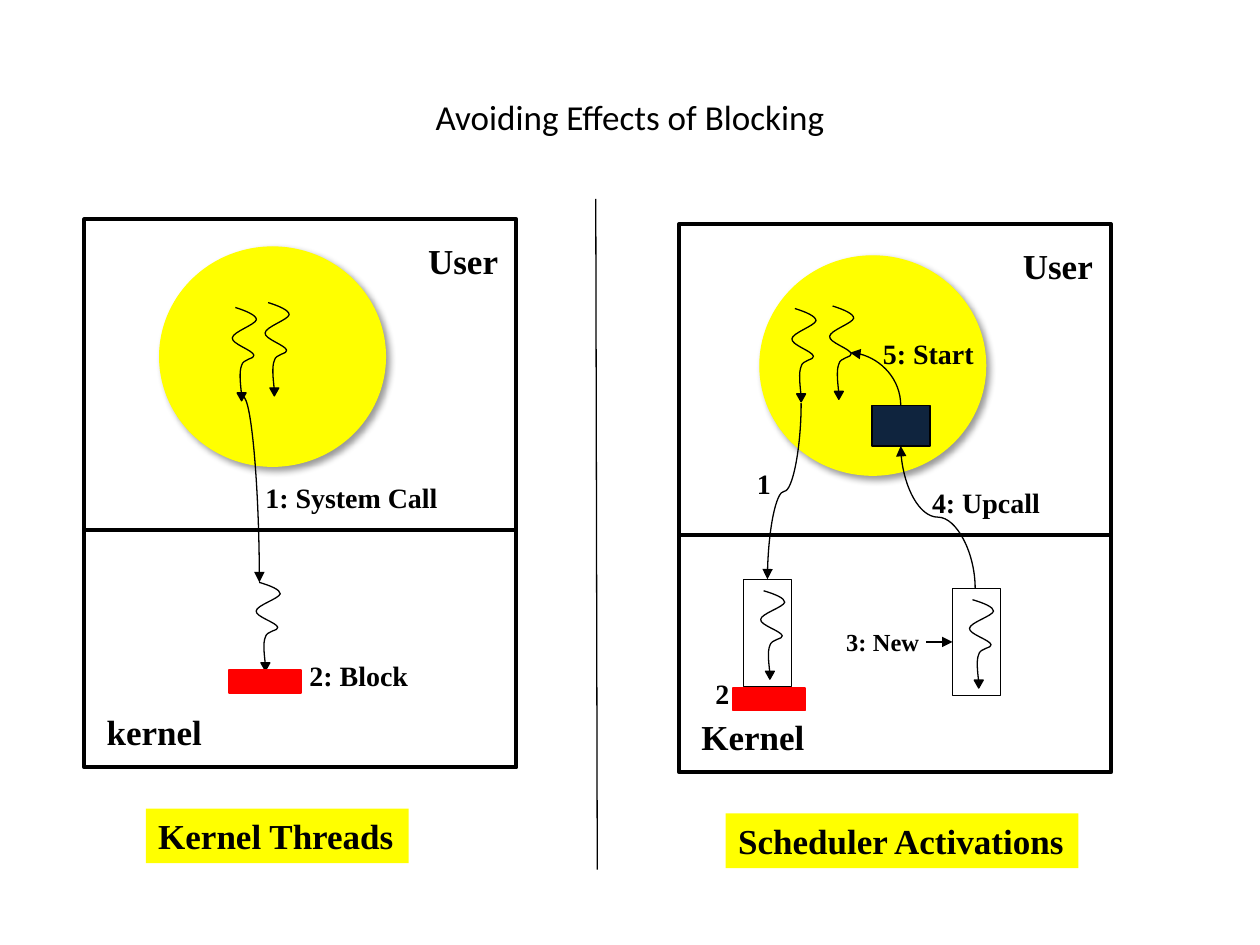
from lxml import etree
from pptx import Presentation
from pptx import util as u
from pptx.dml.color import RGBColor
from pptx.enum import shapes, text
from pptx.oxml.ns import qn

COLORS = {"ink": "000000", "process": "FFFF00", "block": "FF0000", "upcall": "0F243E"}
SERIF = "Times New Roman"
PANEL_W, PANEL_H = 8.71, 11.05
THREAD_W = 0.5
SQUIGGLE = [
    (0.15, 0), (0.6, 0.04), (1, 0.09), (1, 0.14),
    (0.95, 0.2), (0.05, 0.28), (0.03, 0.35),
    (0, 0.42), (0.85, 0.49), (0.9, 0.55),
    (0.95, 0.59), (0.45, 0.59), (0.4, 0.67),
    (0.3, 0.74), (0.35, 0.87), (0.4, 1),
]


def rgb(name):
    """Return the named colour."""
    return RGBColor.from_string(COLORS[name])


def add_text(s, x, y, w, h, words, size, font=SERIF, fill=None):
    """Add a one-line text box and return it."""
    sp = s.shapes.add_textbox(u.Cm(x), u.Cm(y), u.Cm(w), u.Cm(h))
    if fill:
        sp.fill.solid()
        sp.fill.fore_color.rgb = rgb(fill)
    tf = sp.text_frame
    tf.word_wrap = False
    tf.auto_size = text.MSO_AUTO_SIZE.SHAPE_TO_FIT_TEXT
    r = tf.paragraphs[0].add_run()
    r.text = words
    r.font.name, r.font.size, r.font.bold = font, u.Pt(size), font == SERIF
    r.font.color.rgb = rgb("ink")
    return sp


def style(sp, fill=None, line="ink", width=0.75):
    """Set the fill and outline of a shape without a shadow."""
    sp.shadow.inherit = False
    if fill:
        sp.fill.solid()
        sp.fill.fore_color.rgb = rgb(fill)
    else:
        sp.fill.background()
    sp.line.color.rgb = rgb(line)
    sp.line.width = u.Pt(width)
    return sp


def add_box(parent, kind, x, y, w, h, **look):
    """Add a styled preset shape to a slide or group."""
    sp = parent.shapes.add_shape(kind, u.Cm(x), u.Cm(y), u.Cm(w), u.Cm(h))
    return style(sp, **look)


def add_line(s, x1, y1, x2, y2, width=0.75, arrow=False, kind=shapes.MSO_CONNECTOR.STRAIGHT):
    """Add a connector, with an arrowhead at its end on request."""
    c = s.shapes.add_connector(kind, u.Cm(x1), u.Cm(y1), u.Cm(x2), u.Cm(y2))
    c.line.color.rgb = rgb("ink")
    c.line.width = u.Pt(width)
    spPr = c._element.spPr
    if arrow:
        etree.SubElement(spPr.find(qn("a:ln")), qn("a:tailEnd"), type="triangle")
    etree.SubElement(spPr, qn("a:effectLst"))
    return c


def add_curve(s, x1, y1, x2, y2, bends, upright=True):
    """Add a curved arrow; an upright one leaves vertically and heads left."""
    if upright:
        cx, cy = (x1 + x2) / 2, (y1 + y2) / 2
        dx, dy = (y2 - y1) / 2, (x1 - x2) / 2
        x1, y1, x2, y2 = cx - dx, cy - dy, cx + dx, cy + dy
    c = add_line(s, x1, y1, x2, y2, arrow=True, kind=shapes.MSO_CONNECTOR.CURVE)
    spPr = c._element.spPr
    spPr.find(qn("a:prstGeom")).set("prst", f"curvedConnector{bends}")
    if upright:
        spPr.find(qn("a:xfrm")).set("rot", str(90 * 60000))


def add_thread(s, x, y, h):
    """Add a wavy thread with an arrowhead and return its group."""
    g = s.shapes.add_group_shape()
    pts = [(u.Cm(x + px * THREAD_W), u.Cm(y + py * h)) for px, py in SQUIGGLE]
    fb = g.shapes.build_freeform(*pts[0])
    fb.add_line_segments(pts[1:], close=False)
    sp = style(fb.convert_to_shape())
    outline = next(sp._element.iter(qn("a:path")))
    steps = outline.findall(qn("a:lnTo"))
    for i in range(0, len(steps), 3):
        bend = etree.SubElement(outline, qn("a:cubicBezTo"))
        for step in steps[i:i + 3]:
            bend.append(step[0])
            outline.remove(step)
    head = add_box(g, shapes.MSO_SHAPE.ISOSCELES_TRIANGLE,
                   x + 0.4 * THREAD_W - 0.09, y + h - 0.03, 0.18, 0.16, fill="ink")
    head.rotation = 180
    return g


def add_boxed_thread(s, x, y):
    """Add a kernel thread inside a box and return the box."""
    g = add_thread(s, x + 0.33, y + 0.23, 1.65)
    return add_box(g, shapes.MSO_SHAPE.RECTANGLE, x, y, 0.97, 2.16)


def add_block(s, x, y):
    """Add the red bar that blocks a thread."""
    add_box(s, shapes.MSO_SHAPE.RECTANGLE, x, y, 1.45, 0.46, fill="block", line="block")


def add_labels(s, x, y, labels):
    """Add step labels at offsets from a panel corner."""
    for dx, dy, w, words, size in labels:
        add_text(s, x + dx, y + dy, w, 0.94 if size == 16 else 0.86, words, size)


def add_panel(s, x, y, process, kernel, caption):
    """Add the user and kernel frame, its process circle and its caption."""
    px, py = process
    sp = add_box(s, shapes.MSO_SHAPE.OVAL, x + px, y + py, 4.55, 4.42,
                 fill="process", line="process")
    effects = sp._element.spPr.find(qn("a:effectLst"))
    shadow = etree.SubElement(effects, qn("a:outerShdw"), blurRad=str(u.Pt(4)),
                              dist=str(u.Pt(3)), dir=str(45 * 60000), rotWithShape="0")
    color = etree.SubElement(shadow, qn("a:srgbClr"), val=COLORS["ink"])
    etree.SubElement(color, qn("a:alpha"), val="40000")
    add_box(s, shapes.MSO_SHAPE.RECTANGLE, x, y, PANEL_W, PANEL_H, width=2.25)
    add_line(s, x, y + 6.27, x + PANEL_W, y + 6.27, width=2.25)
    add_text(s, x + 6.68, y + 0.28, 1.95, 1.1, "User", 20)
    w, words = kernel
    add_text(s, x + 0.2, y + 9.78, w, 1.1, words, 20)
    dx, w, words = caption
    add_text(s, x + dx, y + 11.88, w, 1.1, words, 20, fill="process")


def add_kernel_threads(s, x, y):
    """Add the panel where a system call blocks the kernel thread."""
    add_panel(s, x, y, (1.52, 0.56), (2.5, "kernel"), (1.24, 5.3, "Kernel Threads"))
    for dx, dy, h in [(3.63, 1.68, 1.75), (2.97, 1.78, 1.75), (3.45, 7.32, 1.65)]:
        add_thread(s, x + dx, y + dy, h)
    add_curve(s, x + 3.2, y + 3.58, x + 3.53, y + 7.32, 2, upright=False)
    add_block(s, x + 2.92, y + 9.09)
    add_labels(s, x, y, [(3.4, 5.15, 4.04, "1: System Call", 16),
                         (4.29, 8.74, 2.51, "2: Block", 16)])


def add_scheduler_activations(s, x, y):
    """Add the panel where an upcall starts another user thread."""
    add_panel(s, x, y, (1.63, 0.64), (2.7, "Kernel"), (0.94, 7.11, "Scheduler Activations"))
    for dx, dy in [(2.26, 1.7), (3.02, 1.65)]:
        add_thread(s, x + dx, y + dy, 1.75)
    add_boxed_thread(s, x + 1.3, y + 7.16)
    fresh = add_boxed_thread(s, x + 5.51, y + 7.34)
    add_box(s, shapes.MSO_SHAPE.RECTANGLE, x + 3.89, y + 3.66, 1.17, 0.81, fill="upcall")
    for x1, y1, x2, y2, bends in [(2.46, 3.61, 1.78, 7.16, 3),
                                  (5.97, 7.34, 4.47, 4.47, 3),
                                  (4.47, 3.66, 3.45, 2.59, 2)]:
        add_curve(s, x + x1, y + y1, x + x2, y + y2, bends)
    c = add_line(s, x + 4.98, y + 8.42, x + 5.51, y + 8.42, arrow=True)
    c.end_connect(fresh, 1)
    add_block(s, x + 1.09, y + 9.35)
    add_labels(s, x, y, [(1.32, 4.77, 0.79, "1", 16), (0.48, 8.99, 0.79, "2", 16),
                         (3.12, 8, 2.01, "3: New", 14), (4.85, 5.15, 2.72, "4: Upcall", 16),
                         (3.86, 2.13, 2.36, "5: Start", 16)])


def add_title(s, x, y, w, h):
    """Add the centred slide title."""
    tf = add_text(s, x, y, w, h, "Avoiding Effects of Blocking", 20, font="Calibri").text_frame
    tf.word_wrap = True
    tf.auto_size = text.MSO_AUTO_SIZE.NONE
    tf.vertical_anchor = text.MSO_ANCHOR.MIDDLE
    tf.paragraphs[0].alignment = text.PP_ALIGN.CENTER


def main():
    """Build and save the slide."""
    prs = Presentation()
    prs.slide_width, prs.slide_height = u.Cm(25.4), u.Cm(19.05)
    s = prs.slides.add_slide(prs.slide_layouts[6])
    add_title(s, 1.27, 0.76, 22.86, 3.18)
    add_kernel_threads(s, 1.7, 4.42)
    add_scheduler_activations(s, 13.69, 4.52)
    add_line(s, 12.01, 4.01, 12.04, 17.53)
    prs.save("out.pptx")


if __name__ == "__main__":
    main()
